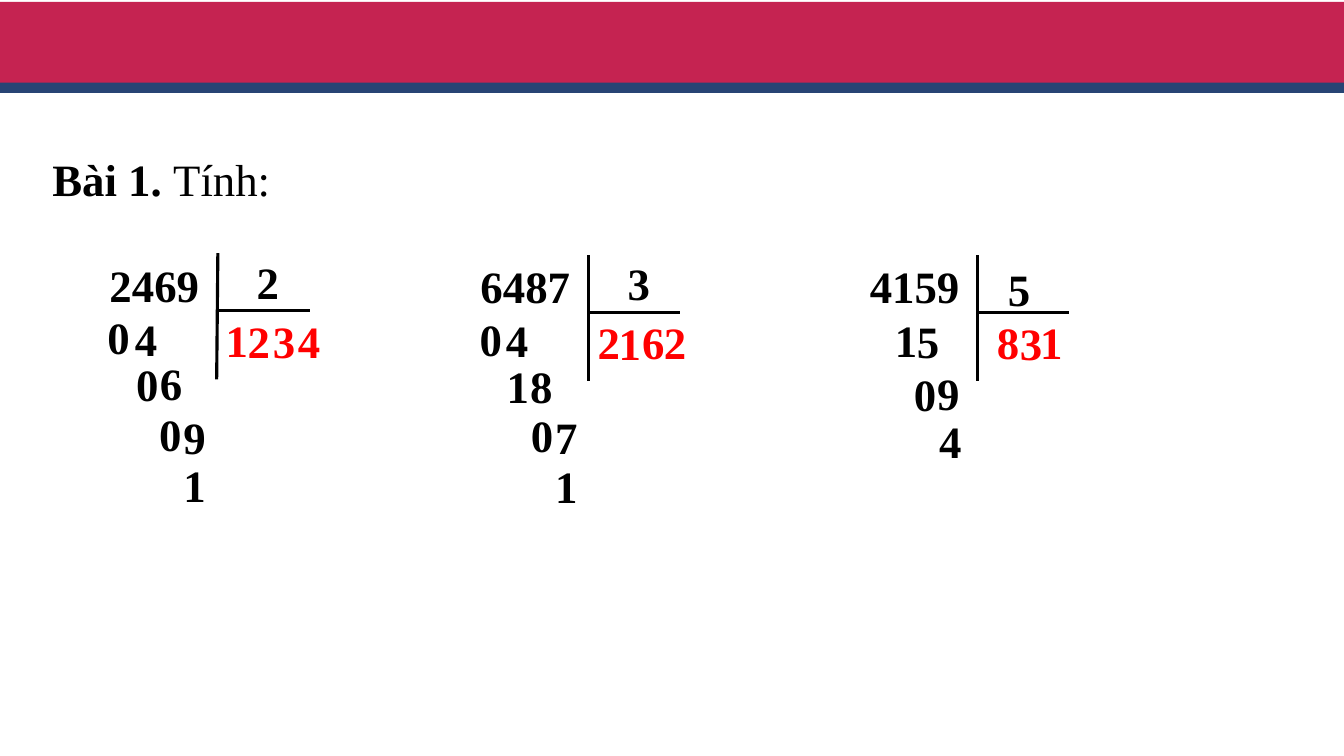
from dataclasses import dataclass

from lxml.etree import SubElement
from pptx import Presentation
from pptx.dml.color import RGBColor
from pptx.enum.shapes import MSO_CONNECTOR, MSO_SHAPE
from pptx.enum.text import MSO_AUTO_SIZE
from pptx.oxml.ns import qn
from pptx.slide import Slide
from pptx.util import Cm, Pt

FONT_NAME = "Times New Roman"
FONT_SIZE = 32
BLACK = "000000"
RED = "FF0000"
CRIMSON = "C52351"
NAVY = "274474"
BOX_HEIGHT = 1.63
DIGIT_WIDTH = 1.7
DIVIDEND_WIDTH = 3.38
BRACKET_HEIGHT = 3.18
BRACKET_WIDTH = 2.31
BRACKET_BAR_TOP = 1.45


@dataclass(frozen=True)
class Run:
    text: str
    bold: bool = True
    color: str = BLACK


@dataclass(frozen=True)
class Band:
    top: float
    height: float
    color: str


@dataclass(frozen=True)
class Number:
    text: str
    left: float
    top: float
    color: str = BLACK
    width: float = DIGIT_WIDTH


@dataclass(frozen=True)
class Division:
    bracket_left: float
    bracket_top: float
    dividend: Number
    divisor: Number
    digits: tuple[Number, ...]
    bracket_slant: float = 0


BANDS = (Band(0.05, 2.08, CRIMSON), Band(2.08, 0.26, NAVY))

DIVISIONS = (
    Division(
        24.64, 6.43,
        Number("4159", 21.67, 6.4, width=DIVIDEND_WIDTH),
        Number("5", 25.15, 6.48),
        (
            Number("8", 24.87, 7.8, RED),
            Number("1", 22.3, 7.75),
            Number("3", 25.45, 7.82, RED),
            Number("5", 22.86, 7.77),
            Number("0", 22.78, 9.12),
            Number("9", 23.37, 9.09),
            Number("1", 25.96, 7.8, RED),
            Number("4", 23.42, 10.29),
        ),
    ),
    Division(
        5.49, 6.38,
        Number("2469", 2.51, 6.38, width=DIVIDEND_WIDTH),
        Number("2", 6.22, 6.3),
        (
            Number("1", 5.44, 7.75, RED),
            Number("0", 2.46, 7.67),
            Number("4", 3.15, 7.72),
            Number("2", 5.99, 7.77, RED),
            Number("0", 3.18, 8.86),
            Number("6", 3.78, 8.84),
            Number("3", 6.63, 7.77, RED),
            Number("0", 3.76, 10.13),
            Number("9", 4.37, 10.19),
            Number("4", 7.26, 7.77, RED),
            Number("1", 4.37, 11.4),
        ),
        bracket_slant=-0.03,
    ),
    Division(
        14.83, 6.43,
        Number("6487", 11.86, 6.4, width=DIVIDEND_WIDTH),
        Number("3", 15.57, 6.32),
        (
            Number("2", 14.81, 7.8, RED),
            Number("0", 11.84, 7.72),
            Number("4", 12.5, 7.75),
            Number("1", 15.34, 7.82, RED),
            Number("1", 12.52, 8.92),
            Number("8", 13.11, 8.92, width=1.52),
            Number("6", 15.93, 7.8, RED),
            Number("0", 13.13, 10.16),
            Number("7", 13.74, 10.21),
            Number("2", 16.48, 7.8, RED),
            Number("1", 13.74, 11.43),
        ),
    ),
)


def rgb(color: str) -> RGBColor:
    return RGBColor.from_string(color)


def add_band(slide: Slide, band: Band, width: int) -> None:
    shape = slide.shapes.add_shape(
        MSO_SHAPE.RECTANGLE, 0, Cm(band.top), width, Cm(band.height)
    )
    shape.shadow.inherit = False
    shape.fill.solid()
    shape.fill.fore_color.rgb = rgb(band.color)
    shape.line.fill.background()


def add_text(
    slide: Slide, left: float, top: float, width: float, *runs: Run, wrap: bool = True
) -> None:
    text_box = slide.shapes.add_textbox(Cm(left), Cm(top), Cm(width), Cm(BOX_HEIGHT))
    text_frame = text_box.text_frame
    text_frame.word_wrap = wrap
    text_frame.auto_size = MSO_AUTO_SIZE.SHAPE_TO_FIT_TEXT
    paragraph = text_frame.paragraphs[0]
    for item in runs:
        run = paragraph.add_run()
        run.text = item.text
        run.font.name = FONT_NAME
        run.font.size = Pt(FONT_SIZE)
        run.font.bold = item.bold
        run.font.color.rgb = rgb(item.color)


def add_number(slide: Slide, number: Number) -> None:
    add_text(
        slide, number.left, number.top, number.width,
        Run(number.text, color=number.color),
    )


def add_line(slide: Slide, left: float, top: float, width: float, height: float) -> None:
    connector = slide.shapes.add_connector(
        MSO_CONNECTOR.STRAIGHT, Cm(left), Cm(top), Cm(left + width), Cm(top + height)
    )
    connector.line.color.rgb = rgb(BLACK)
    connector.line.width = Pt(2.25)
    SubElement(connector._element.spPr, qn("a:effectLst"))


def add_division(slide: Slide, division: Division) -> None:
    left, top = division.bracket_left, division.bracket_top
    for digit in division.digits:
        add_number(slide, digit)
    add_line(slide, left, top, division.bracket_slant, BRACKET_HEIGHT)
    add_line(slide, left, top + BRACKET_BAR_TOP, BRACKET_WIDTH, 0)
    add_number(slide, division.dividend)
    add_number(slide, division.divisor)


def main() -> None:
    presentation = Presentation()
    presentation.slide_width = Cm(33.87)
    presentation.slide_height = Cm(19.05)
    slide = presentation.slides.add_slide(presentation.slide_layouts[6])
    for band in BANDS:
        add_band(slide, band, presentation.slide_width)
    add_text(slide, 1.07, 3.7, 6.05, Run("Bài 1. "), Run("Tính:", bold=False), wrap=False)
    for division in DIVISIONS:
        add_division(slide, division)
    presentation.save("out.pptx")


if __name__ == "__main__":
    main()
